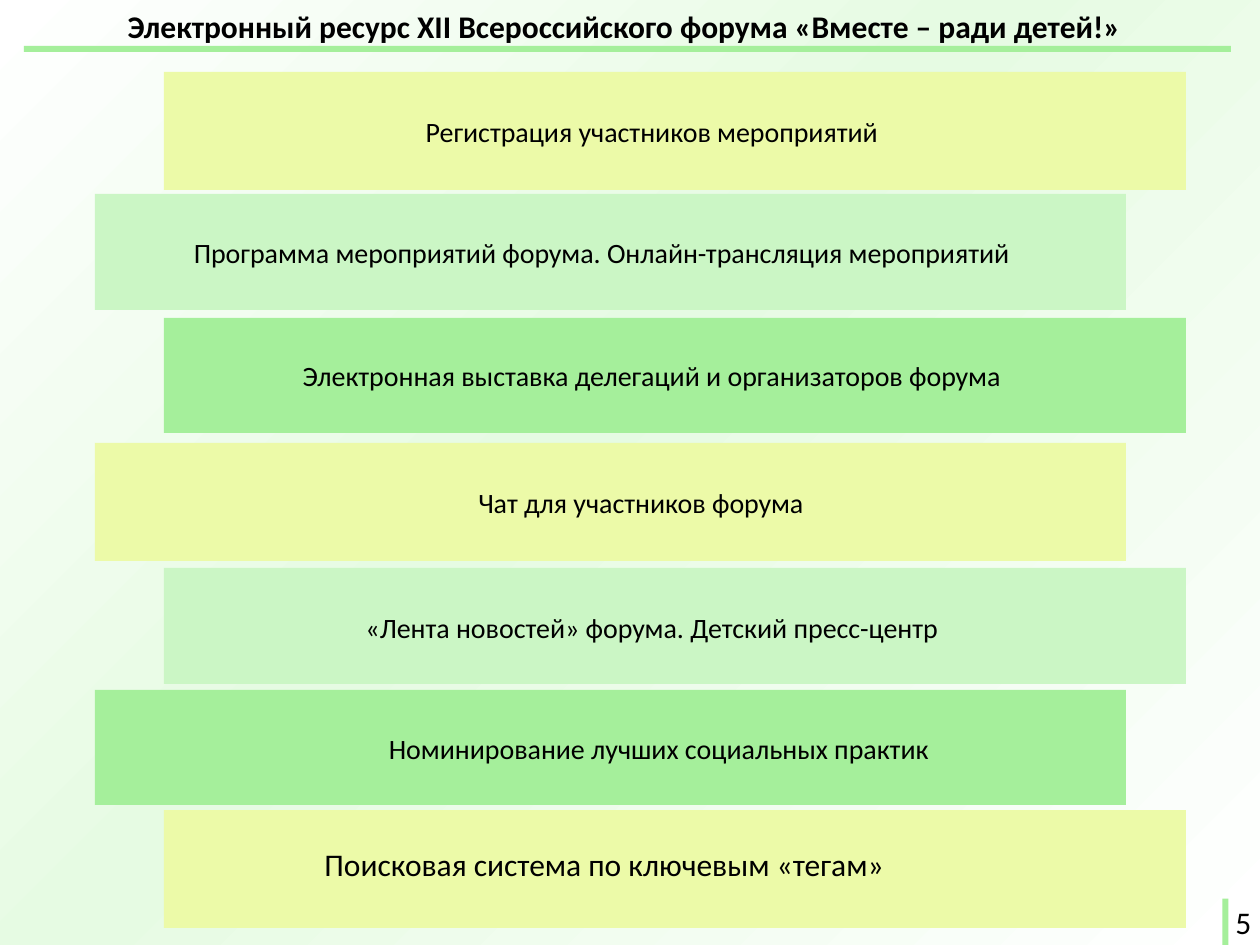
import copy
from dataclasses import dataclass

import pptx
import pptx.dml.color
import pptx.enum.shapes
import pptx.enum.text
import pptx.util

RGB = pptx.dml.color.RGBColor.from_string
ALIGN = pptx.enum.text.PP_ALIGN
AUTO_SIZE = pptx.enum.text.MSO_AUTO_SIZE
EMU_PER_PX = 914400 / 126


@dataclass(frozen=True)
class Theme:
    font: str = "Calibri"
    text: str = "000000"
    accent: str = "A5EF9B"
    pale_green: str = "CBF6C5"
    yellow: str = "ECFAA8"
    background: tuple = ((0, "FFFFFF"), (0.45, "E6FBE3"), (1, "FFFFFF"))
    large: int = 18
    normal: int = 16


def px(length):
    return pptx.util.Emu(round(length * EMU_PER_PX))


class SlideBuilder:
    def __init__(self, slide, theme):
        self.slide = slide
        self.theme = theme

    def background(self):
        fill = self.slide.background.fill
        fill.gradient()
        fill.gradient_angle = 315
        stop_list = self.slide.element.xpath(".//p:bg//a:gsLst")[0]
        stop_list.insert(1, copy.deepcopy(stop_list[0]))
        for stop, (position, color) in zip(fill.gradient_stops, self.theme.background):
            stop.position = position
            stop.color.rgb = RGB(color)

    def set_text(self, frame, text, size, align, bold=False):
        frame.text = text
        paragraph = frame.paragraphs[0]
        paragraph.alignment = align
        font = paragraph.font
        font.name = self.theme.font
        font.size = pptx.util.Pt(size)
        font.bold = bold
        font.color.rgb = RGB(self.theme.text)

    def title(self, text, left, top, width, height):
        heading = self.slide.shapes.title
        heading.left, heading.top = px(left), px(top)
        heading.width, heading.height = px(width), px(height)
        frame = heading.text_frame
        frame.auto_size = AUTO_SIZE.NONE
        frame.vertical_anchor = pptx.enum.text.MSO_ANCHOR.TOP
        self.set_text(frame, text, self.theme.large, ALIGN.CENTER, bold=True)

    def bar(self, left, top, width, height, color, rotation=0):
        bar = self.slide.shapes.add_shape(
            pptx.enum.shapes.MSO_SHAPE.RECTANGLE,
            px(left), px(top), px(width), px(height))
        bar.rotation = rotation
        bar.shadow.inherit = False
        bar.fill.solid()
        bar.fill.fore_color.rgb = RGB(color)
        bar.line.fill.background()

    def label(self, text, left, top, width, height, size, align=ALIGN.LEFT, wrap=True):
        box = self.slide.shapes.add_textbox(px(left), px(top), px(width), px(height))
        frame = box.text_frame
        frame.word_wrap = wrap
        frame.auto_size = AUTO_SIZE.SHAPE_TO_FIT_TEXT
        self.set_text(frame, text, size, align)


def main():
    theme = Theme()
    presentation = pptx.Presentation()
    presentation.slide_width, presentation.slide_height = px(1260), px(945)
    slide = presentation.slides.add_slide(presentation.slide_layouts[5])
    page = SlideBuilder(slide, theme)

    page.background()
    page.title("Электронный ресурс XII Всероссийского форума «Вместе – ради детей!»",
               14, 1, 1221, 89)
    page.bar(24, 46, 1207, 6, theme.accent)

    # Bar top, label left, label top, label width, feature of the forum resource
    features = (
        (72, 192, 108, 920, "Регистрация участников мероприятий"),
        (194, 123, 229, 958, "Программа мероприятий форума. Онлайн-трансляция мероприятий"),
        (318, 192, 352, 920, "Электронная выставка делегаций и организаторов форума"),
        (443, 181, 479, 920, "Чат для участников форума"),
        (568, 192, 604, 920, "«Лента новостей» форума. Детский пресс-центр"),
        (690, 199, 725, 920, "Номинирование лучших социальных практик"),
        (810, 312, 839, 725, "Поисковая система по ключевым «тегам»"),
    )
    bar_styles = ((theme.yellow, 118), (theme.pale_green, 116), (theme.accent, 115))
    bar_spans = ((164, 1022), (95, 1031))
    for index, (bar_top, left, top, width, feature) in enumerate(features):
        color, height = bar_styles[index % len(bar_styles)]
        bar_left, bar_width = bar_spans[index % len(bar_spans)]
        page.bar(bar_left, bar_top, bar_width, height, color)
        if index == len(features) - 1:
            page.label(feature, left, top, width, 50, theme.large)
        else:
            page.label(feature, left, top, width, 47, theme.normal, ALIGN.CENTER)

    page.bar(1202, 919, 47, 6, theme.accent, rotation=270)
    page.label("5", 1223, 897, 42, 50, theme.large, wrap=False)
    presentation.save("out.pptx")


if __name__ == "__main__":
    main()
